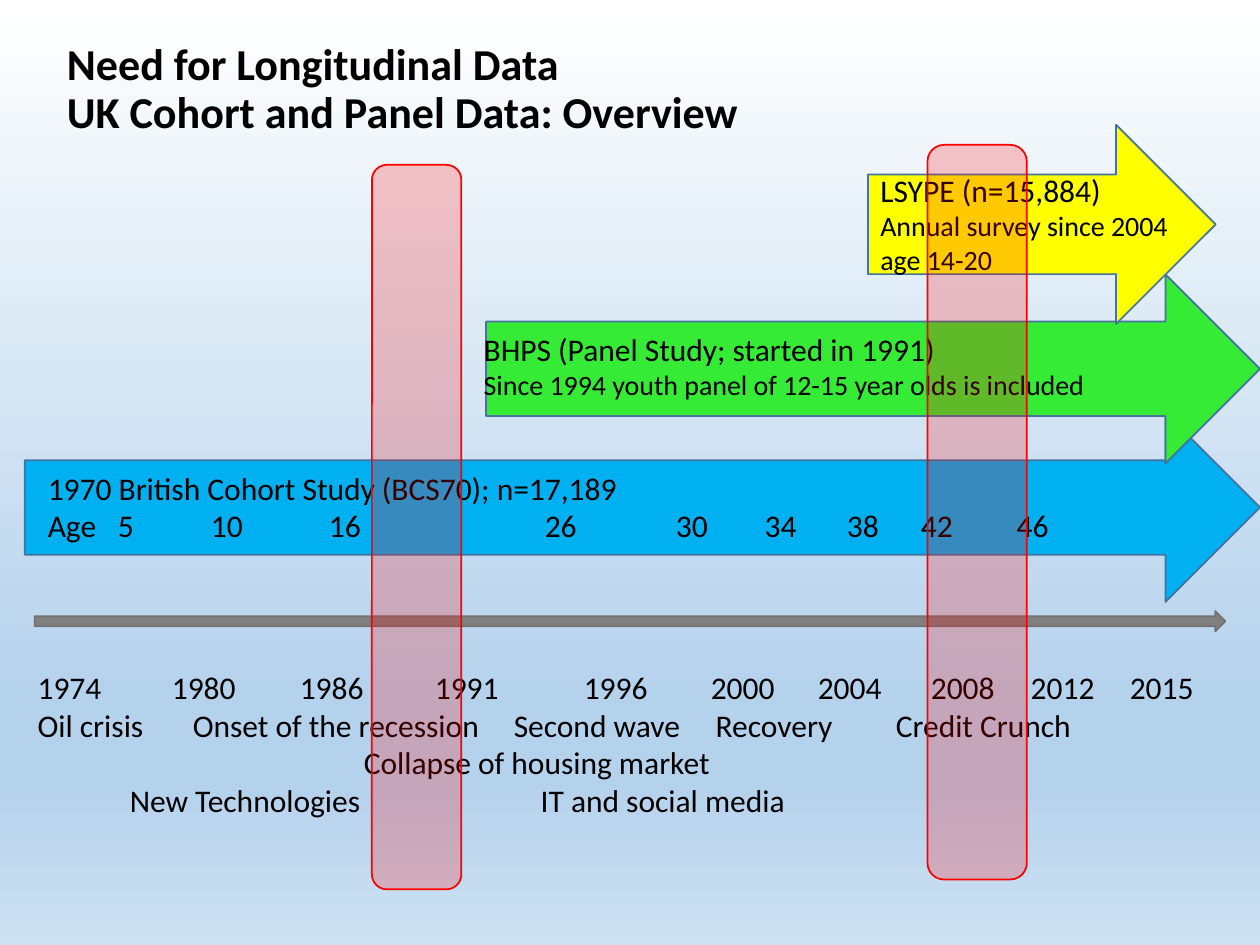
from lxml.etree import SubElement
from pptx import Presentation
from pptx.dml.color import RGBColor
from pptx.enum.shapes import MSO_SHAPE
from pptx.enum.text import MSO_ANCHOR, MSO_AUTO_SIZE, PP_ALIGN
from pptx.oxml.ns import qn
from pptx.util import Pt

BLACK = RGBColor(0x00, 0x00, 0x00)
WHITE = RGBColor(0xFF, 0xFF, 0xFF)
SKY = RGBColor(0xB5, 0xD2, 0xEC)
PALE_SKY = RGBColor(0xCE, 0xE1, 0xF2)
GRAY = RGBColor(0x80, 0x80, 0x80)
DARK_GRAY = RGBColor(0x76, 0x71, 0x71)
BLUE = RGBColor(0x00, 0xB0, 0xF0)
GREEN = RGBColor(0x35, 0xEB, 0x35)
YELLOW = RGBColor(0xFF, 0xFF, 0x00)
OUTLINE = RGBColor(0x43, 0x73, 0x9E)
RED = RGBColor(0xFF, 0x00, 0x00)

YEARS = ["1974", "1980", "1986", "1991", "1996", "2000", "2004", "2008", "2012", "2015"]
YEAR_STOPS = [76.7, 149.8, 227, 312.1, 384.7, 445.8, 510.4, 567.5, 624.1]
AGES = ["Age", "5", "10", "16", "26", "30", "34", "38", "42", "46"]
AGE_STOPS = [40, 93.2, 160.6, 284, 358.9, 409.7, 456.6, 498.9, 553.7]


class SlideBuilder:
    font = "Calibri"
    line_width = Pt(1)

    def __init__(self, slide):
        self.slide = slide

    def background(self, stops):
        fill = self.slide.background.fill
        fill.gradient()
        fill.gradient_angle = 270
        gs_list = next(self.slide.background._cSld.iter(qn("a:gsLst")))
        gs_list.clear()
        for position, color in stops:
            gs = SubElement(gs_list, qn("a:gs"), pos=str(position * 1000))
            SubElement(gs, qn("a:srgbClr"), val=str(color))

    def format_runs(self, p, size, bold=False):
        for r in p.runs:
            r.font.name = self.font
            r.font.size = Pt(size)
            r.font.bold = bold
            r.font.color.rgb = BLACK

    def title(self, text, left, top, width, height, size):
        sp = self.slide.shapes.title
        sp.left, sp.top, sp.width, sp.height = Pt(left), Pt(top), Pt(width), Pt(height)
        tf = sp.text_frame
        tf.text = text
        tf.auto_size = MSO_AUTO_SIZE.NONE
        tf.vertical_anchor = MSO_ANCHOR.MIDDLE
        p = tf.paragraphs[0]
        p.alignment = PP_ALIGN.LEFT
        p.line_spacing = 0.9
        self.format_runs(p, size, bold=True)

    def shape(self, kind, left, top, width, height, fill, line, opacity=None):
        sp = self.slide.shapes.add_shape(kind, Pt(left), Pt(top), Pt(width), Pt(height))
        sp.shadow.inherit = False
        sp.fill.solid()
        sp.fill.fore_color.rgb = fill
        sp.line.color.rgb = line
        sp.line.width = self.line_width
        if opacity is not None:
            color = sp._element.spPr.find(qn("a:solidFill")).find(qn("a:srgbClr"))
            SubElement(color, qn("a:alpha"), val=str(opacity * 1000))

    def arrow(self, left, top, width, height, fill, line=OUTLINE):
        self.shape(MSO_SHAPE.RIGHT_ARROW, left, top, width, height, fill, line)

    def crisis_band(self, left, top, width, height):
        self.shape(MSO_SHAPE.ROUNDED_RECTANGLE, left, top, width, height, RED, RED, 21)

    def text(self, left, top, width, height, lines):
        sp = self.slide.shapes.add_textbox(Pt(left), Pt(top), Pt(width), Pt(height))
        tf = sp.text_frame
        tf.word_wrap = True
        tf.auto_size = MSO_AUTO_SIZE.SHAPE_TO_FIT_TEXT
        for i, (text, size, stops) in enumerate(lines):
            p = tf.add_paragraph() if i else tf.paragraphs[0]
            p.text = text
            self.format_runs(p, size)
            if stops:
                self.tab_stops(p, stops)

    def tab_stops(self, p, stops):
        tab_list = SubElement(p._p.get_or_add_pPr(), qn("a:tabLst"))
        for stop in stops:
            SubElement(tab_list, qn("a:tab"), pos=str(int(Pt(stop))), algn="l")


def main():
    prs = Presentation()
    prs.slide_width, prs.slide_height = Pt(720), Pt(540)
    s = SlideBuilder(prs.slides.add_slide(prs.slide_layouts[5]))

    s.background([(0, WHITE), (74, SKY), (83, SKY), (100, PALE_SKY)])
    s.title("Need for Longitudinal Data\vUK Cohort and Panel Data: Overview",
            31, 37.4, 648, 28, 25.2)

    s.arrow(19.8, 349.2, 680.4, 11.6, GRAY, DARK_GRAY)
    s.text(14.4, 378, 694.8, 94.3, [
        ("\t".join(YEARS), 18, YEAR_STOPS),
        ("Oil crisis\tOnset of the recession\tSecond wave\tRecovery\tCredit Crunch",
         18, [88.7, 272.1, 387.5, 490.4]),
        ("\tCollapse of housing market", 18, [186.4]),
        ("\tNew Technologies\tIT and social media", 18, [52.7, 287.5]),
    ])

    s.arrow(14.2, 236, 705.8, 108, BLUE)
    s.text(20.2, 264.2, 601.2, 51.1, [
        ("1970 British Cohort Study (BCS70); n=17,189", 18, None),
        ("\t".join(AGES), 18, AGE_STOPS),
    ])

    s.arrow(277.8, 156.8, 442.2, 108, GREEN)
    s.arrow(496, 71.3, 198.7, 113.8, YELLOW)
    s.text(269.3, 185, 396.7, 48.2, [
        ("BHPS (Panel Study; started in 1991)", 18, None),
        ("Since 1994 youth panel of 12-15 year olds is included", 16, None),
    ])
    s.text(496, 94.3, 204.5, 67.7, [
        ("LSYPE (n=15,884)", 18, None),
        ("Annual survey since 2004", 16, None),
        ("age 14-20", 16, None),
    ])

    s.crisis_band(212.5, 94.2, 51.1, 414)
    s.crisis_band(530, 82.8, 56.8, 419.8)

    prs.save("out.pptx")


if __name__ == "__main__":
    main()
